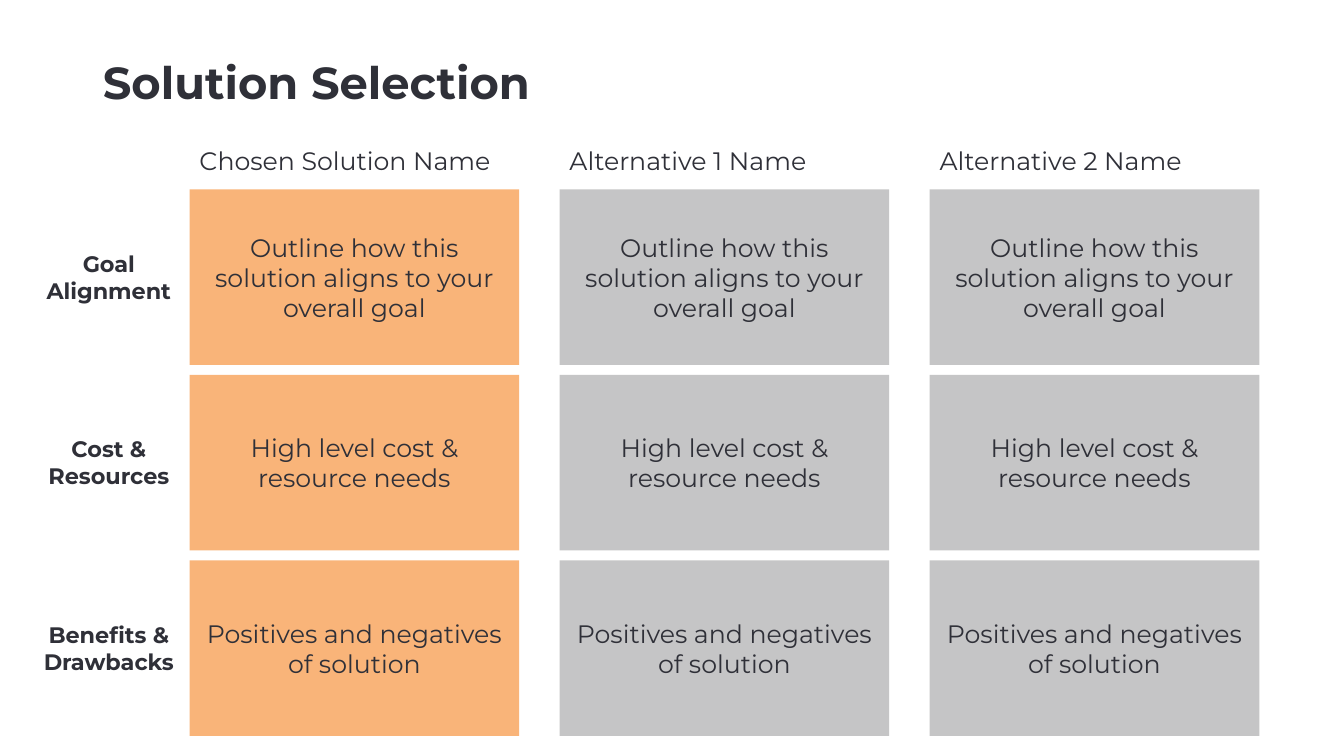
"""Build the solution selection slide, a grid of options against criteria."""
from dataclasses import dataclass
from typing import Any

from pptx import Presentation
from pptx import util as u
from pptx.dml.color import RGBColor
from pptx.enum import shapes, text


@dataclass(frozen=True)
class Theme:
    font: str = "Montserrat"
    ink: RGBColor = RGBColor(0x2F, 0x30, 0x38)
    warm: RGBColor = RGBColor(0xF9, 0xB4, 0x79)
    gray: RGBColor = RGBColor(0xC5, 0xC5, 0xC6)
    title: int = 32
    body: int = 18
    label: int = 16


@dataclass(frozen=True)
class Box:
    left: float
    top: float
    width: float
    height: float

    def emu(self) -> list[u.Length]:
        return [u.Inches(n) for n in (self.left, self.top, self.width, self.height)]


@dataclass(frozen=True)
class Option:
    name: str
    fill: RGBColor


@dataclass(frozen=True)
class Topic:
    label: str
    body: str


THEME = Theme()
OPTIONS = [
    Option("Chosen Solution Name", THEME.warm),
    Option("Alternative 1 Name", THEME.gray),
    Option("Alternative 2 Name", THEME.gray),
]
TOPICS = [
    Topic("Goal Alignment", "Outline how this solution aligns to your overall goal"),
    Topic("Cost & Resources", "High level cost & resource needs"),
    Topic("Benefits & Drawbacks", "Positives and negatives of solution"),
]
LEFT, TOP = 1.88, 1.88
WIDE, HIGH = 3.27, 1.74
COL_GAP, ROW_GAP = 0.4, 0.1
LEFT_AL, MID_AL = text.PP_ALIGN.LEFT, text.PP_ALIGN.CENTER


def write(shape: Any, words: str, size: int, align: text.PP_ALIGN, bold: bool = False) -> None:
    frame = shape.text_frame
    frame.word_wrap = True
    para = frame.paragraphs[0]
    para.alignment = align
    run = para.add_run()
    run.text = words
    font = run.font
    font.name, font.size, font.bold = THEME.font, u.Pt(size), bold
    font.color.rgb = THEME.ink


def add_title(slide: Any, words: str) -> None:
    title = slide.shapes.title
    title.left, title.top, title.width, title.height = Box(0.92, 0.4, 11.5, 0.89).emu()
    write(title, words, THEME.title, LEFT_AL, True)
    title.text_frame.vertical_anchor = text.MSO_ANCHOR.MIDDLE
    title.text_frame.paragraphs[0].line_spacing = 0.9


def add_card(slide: Any, box: Box, fill: RGBColor, words: str) -> None:
    card = slide.shapes.add_shape(shapes.MSO_SHAPE.RECTANGLE, *box.emu())
    card.shadow.inherit = False
    card.fill.solid()
    card.fill.fore_color.rgb = fill
    card.line.fill.background()
    card.text_frame.vertical_anchor = text.MSO_ANCHOR.MIDDLE
    write(card, words, THEME.body, MID_AL)


def add_text(slide: Any, box: Box, words: str, size: int, align: text.PP_ALIGN,
             bold: bool = False) -> None:
    area = slide.shapes.add_textbox(*box.emu())
    write(area, words, size, align, bold)
    area.text_frame.auto_size = text.MSO_AUTO_SIZE.SHAPE_TO_FIT_TEXT


def main() -> None:
    deck = Presentation()
    deck.slide_width, deck.slide_height = u.Inches(13.33), u.Inches(7.5)
    slide = deck.slides.add_slide(deck.slide_layouts.get_by_name("Title Only"))
    add_title(slide, "Solution Selection")
    lefts = [LEFT + col * (WIDE + COL_GAP) for col in range(len(OPTIONS))]
    tops = [TOP + row * (HIGH + ROW_GAP) for row in range(len(TOPICS))]
    for left, option in zip(lefts, OPTIONS):
        add_text(slide, Box(left, 1.39, WIDE, 0.4), option.name, THEME.body, LEFT_AL)
    for top, topic in zip(tops, TOPICS):
        label = Box(0.28, top + 0.55, 1.6, 0.64)
        add_text(slide, label, topic.label, THEME.label, MID_AL, True)
        for left, option in zip(lefts, OPTIONS):
            add_card(slide, Box(left, top, WIDE, HIGH), option.fill, topic.body)
    deck.save("out.pptx")


if __name__ == "__main__":
    main()
